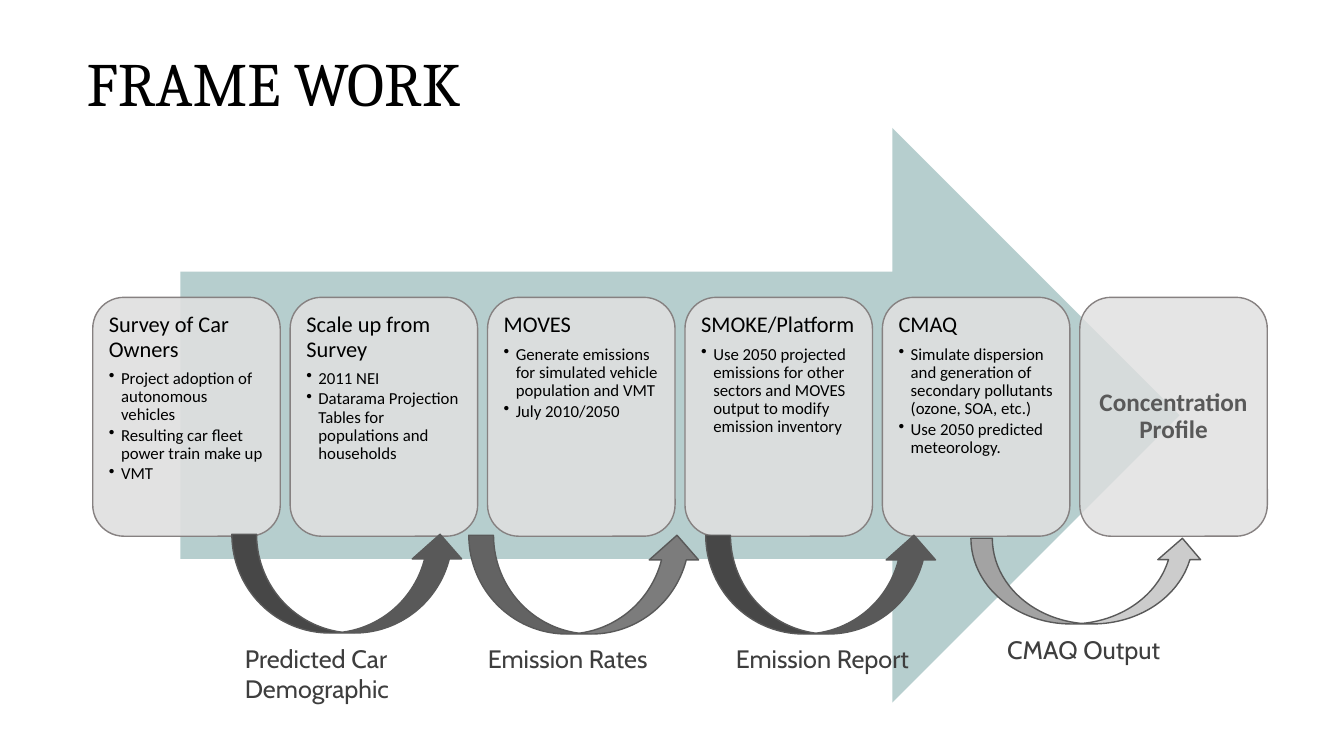
import pptx
import pptx.util
import pptx.dml.color
import pptx.enum.shapes
import pptx.enum.text
import pptx.oxml.ns
import lxml.etree

Inches = pptx.util.Inches
Pt = pptx.util.Pt
RGBColor = pptx.dml.color.RGBColor
PRESET = pptx.enum.shapes.MSO_SHAPE
ANCHOR = pptx.enum.text.MSO_ANCHOR
qn = pptx.oxml.ns.qn

BLACK = RGBColor(0x00, 0x00, 0x00)
TEAL = RGBColor(0x98, 0xBA, 0xBA)
CARD_GRAY = RGBColor(0xDF, 0xDF, 0xDF)
CARD_EDGE = RGBColor(0x86, 0x81, 0x81)
DARK_GRAY = RGBColor(0x59, 0x59, 0x59)
MID_GRAY = RGBColor(0x7C, 0x7C, 0x7C)
LIGHT_GRAY = RGBColor(0xCC, 0xCC, 0xCC)
LABEL_GRAY = RGBColor(0x3E, 0x3E, 0x3E)

deck = pptx.Presentation()
deck.slide_width, deck.slide_height = Inches(13.33), Inches(7.5)
slide = deck.slides.add_slide(deck.slide_layouts[6])


def add_block(preset, left, top, width, height, color, opacity=100, edge=None):
    block = slide.shapes.add_shape(
        preset, Inches(left), Inches(top), Inches(width), Inches(height))
    block.shadow.inherit = False
    block.fill.solid()
    block.fill.fore_color.rgb = color
    if opacity < 100:
        fill_color = block.fill._xPr.find(qn("a:solidFill"))[0]
        alpha = lxml.etree.SubElement(fill_color, qn("a:alpha"))
        alpha.set("val", str(opacity * 1000))
    if edge is None:
        block.line.fill.background()
    else:
        block.line.color.rgb = edge
        block.line.width = Pt(1)
    return block


def add_words(paragraph, words, font, size, color, bold=False):
    run = paragraph.add_run()
    run.text = words
    run.font.name = font
    run.font.size = Pt(size)
    run.font.color.rgb = color
    run.font.bold = bold


# Background arrow
add_block(PRESET.RIGHT_ARROW, 1.79, 1.27, 9.91, 5.7, TEAL, opacity=70)

# Step cards: heading and bullets
steps = [
    ("Survey of Car Owners", ["Project adoption of autonomous vehicles",
                              "Resulting car fleet power train make up", "VMT"]),
    ("Scale up from Survey", ["2011 NEI",
                              "Datarama Projection Tables for populations and households"]),
    ("MOVES", ["Generate emissions for simulated vehicle population and VMT",
               "July 2010/2050"]),
    ("SMOKE/Platform", ["Use 2050 projected emissions for other sectors and MOVES "
                        "output to modify emission inventory"]),
    ("CMAQ", ["Simulate dispersion and generation of secondary pollutants "
              "(ozone, SOA, etc.)", "Use 2050 predicted meteorology."]),
    ("Concentration Profile", []),
]
first_left, last_left = 0.92, 10.71
card_step = (last_left - first_left) / (len(steps) - 1)

for index, (heading, bullets) in enumerate(steps):
    is_result = not bullets
    card = add_block(PRESET.ROUNDED_RECTANGLE, first_left + index * card_step, 2.95,
                     1.86, 2.37, CARD_GRAY, 80 if is_result else 90, CARD_EDGE)
    frame = card.text_frame
    frame.word_wrap = True
    frame.margin_left = frame.margin_right = Inches(0.07)
    frame.margin_top = frame.margin_bottom = Inches(0.07)
    frame.vertical_anchor = ANCHOR.MIDDLE if is_result else ANCHOR.TOP

    title_line = frame.paragraphs[0]
    title_line.line_spacing = 0.9
    if is_result:
        title_line.alignment = pptx.enum.text.PP_ALIGN.CENTER
        add_words(title_line, heading, "Calibri", 18, DARK_GRAY, bold=True)
    else:
        title_line.alignment = pptx.enum.text.PP_ALIGN.LEFT
        title_line.space_after = Pt(5.6)
        add_words(title_line, heading, "Calibri", 16, BLACK)

    for bullet in bullets:
        item = frame.add_paragraph()
        item.alignment = pptx.enum.text.PP_ALIGN.LEFT
        item.level = 1
        item.line_spacing = 0.9
        item.space_after = Pt(1.8)
        properties = item._p.get_or_add_pPr()
        properties.set("marL", str(Inches(0.12)))
        properties.set("indent", str(-Inches(0.12)))
        lxml.etree.SubElement(properties, qn("a:buChar")).set("char", "•")
        add_words(item, bullet, "Calibri", 12, BLACK)

# Curved arrows between steps: left, top, height, color
handoffs = [
    (4.65, 5.31, 0.98, MID_GRAY),
    (7.0, 5.31, 0.98, DARK_GRAY),
    (2.3, 5.3, 0.98, DARK_GRAY),
    (9.63, 5.34, 0.85, LIGHT_GRAY),
]
for left, top, height, color in handoffs:
    add_block(PRESET.CURVED_UP_ARROW, left, top, 2.31, height, color, edge=DARK_GRAY)

# Title and arrow labels: left, top, width, height, lines, font, size, color
captions = [
    (0.76, 0.13, 12.08, 1.45, ["FRAME WORK"], "Cambria", 44, BLACK),
    (2.33, 6.33, 2.31, 0.71, ["Predicted Car", "Demographic"], "Cabin", 18, LABEL_GRAY),
    (4.74, 6.33, 2.15, 0.4, ["Emission Rates"], "Cabin", 18, LABEL_GRAY),
    (7.2, 6.33, 2.31, 0.4, ["Emission Report"], "Cabin", 18, LABEL_GRAY),
    (9.89, 6.24, 2.31, 0.4, ["CMAQ Output"], "Cabin", 18, LABEL_GRAY),
]
for left, top, width, height, lines, font, size, color in captions:
    caption = slide.shapes.add_textbox(
        Inches(left), Inches(top), Inches(width), Inches(height)).text_frame
    caption.word_wrap = True
    if font == "Cambria":
        caption.vertical_anchor = ANCHOR.MIDDLE
        caption.paragraphs[0].line_spacing = 0.9
    for number, words in enumerate(lines):
        line = caption.add_paragraph() if number else caption.paragraphs[0]
        add_words(line, words, font, size, color)

deck.save("out.pptx")
